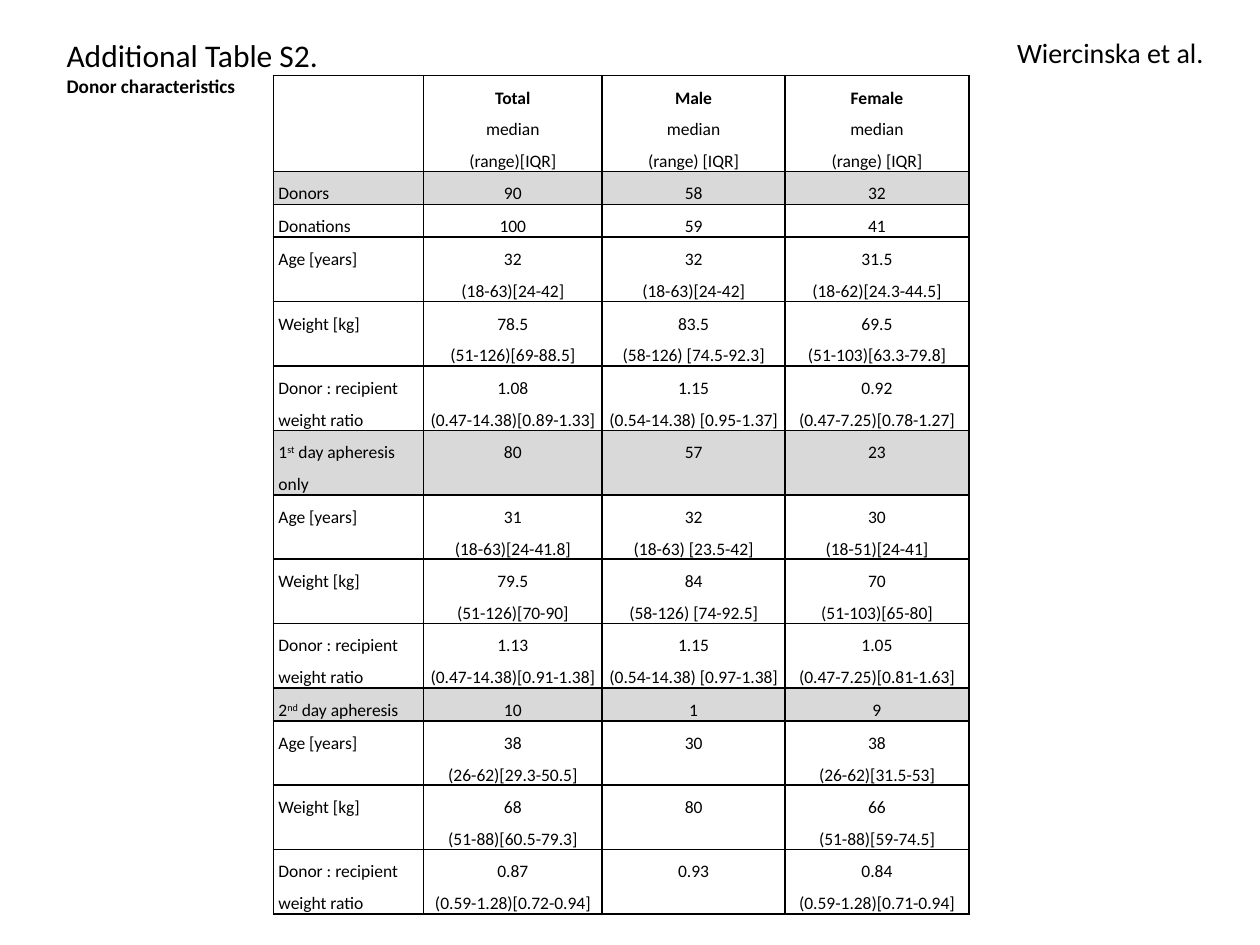
import dataclasses
import typing

import lxml.etree
import pptx
import pptx.dml.color
import pptx.enum.text
import pptx.oxml.ns
import pptx.util

Inches = pptx.util.Inches
Align = pptx.enum.text.PP_ALIGN

FONT = "Calibri"
BLACK = "000000"
GREY = "D9D9D9"
LINE = 0.22  # height of one text line in a row
WIDTHS = [1.19, 1.42, 1.45, 1.46]


@dataclasses.dataclass
class Row:
    cells: list[str]  # "\n" splits lines, "^" wraps superscripts
    lines: int = 2
    fill: typing.Optional[str] = None
    head: bool = False


@dataclasses.dataclass
class Note:
    left: float
    top: float
    width: float
    height: float
    lines: list[tuple[str, float, bool]]  # text, size, bold
    align: Align = Align.LEFT


AGE, WEIGHT, RATIO = "Age [years]", "Weight [kg]", "Donor : recipient\nweight ratio"

ROWS = [
    Row(["", "Total\nmedian\n(range)[IQR]", "Male\nmedian\n(range) [IQR]",
         "Female\nmedian\n(range) [IQR]"], lines=3, head=True),
    # All donors
    Row(["Donors", "90", "58", "32"], lines=1, fill=GREY),
    Row(["Donations", "100", "59", "41"], lines=1),
    Row([AGE, "32\n(18-63)[24-42]", "32\n(18-63)[24-42]", "31.5\n(18-62)[24.3-44.5]"]),
    Row([WEIGHT, "78.5\n(51-126)[69-88.5]", "83.5\n(58-126) [74.5-92.3]",
         "69.5\n(51-103)[63.3-79.8]"]),
    Row([RATIO, "1.08\n(0.47-14.38)[0.89-1.33]", "1.15\n(0.54-14.38) [0.95-1.37]",
         "0.92\n(0.47-7.25)[0.78-1.27]"]),
    # First day only
    Row(["1^st^ day apheresis only", "80", "57", "23"], fill=GREY),
    Row([AGE, "31\n(18-63)[24-41.8]", "32\n(18-63) [23.5-42]", "30\n(18-51)[24-41]"]),
    Row([WEIGHT, "79.5\n(51-126)[70-90]", "84\n(58-126) [74-92.5]",
         "70\n(51-103)[65-80]"]),
    Row([RATIO, "1.13\n(0.47-14.38)[0.91-1.38]", "1.15\n(0.54-14.38) [0.97-1.38]",
         "1.05\n(0.47-7.25)[0.81-1.63]"]),
    # Second day
    Row(["2^nd^ day apheresis", "10", "1", "9"], lines=1, fill=GREY),
    Row([AGE, "38\n(26-62)[29.3-50.5]", "30", "38\n(26-62)[31.5-53]"]),
    Row([WEIGHT, "68\n(51-88)[60.5-79.3]", "80", "66\n(51-88)[59-74.5]"]),
    Row([RATIO, "0.87\n(0.59-1.28)[0.72-0.94]", "0.93", "0.84\n(0.59-1.28)[0.71-0.94]"]),
]

NOTES = [
    Note(0.43, 0.24, 8.43, 0.59, [("Additional Table S2.", 18, False),
                                  ("Donor characteristics", 11, True)]),
    Note(7.6, 0.23, 2.05, 0.37, [("Wiercinska et al.", 16, False)], Align.RIGHT),
]


def tint(code: str) -> pptx.dml.color.RGBColor:
    return pptx.dml.color.RGBColor.from_string(code)


def add_run(para, text: str, size: float, bold: bool = False, sup: bool = False) -> None:
    run = para.add_run()
    run.text = text
    run.font.name = FONT
    run.font.size = pptx.util.Pt(size)
    run.font.bold = bold
    run.font.color.rgb = tint(BLACK)
    if sup:
        run.font._element.set("baseline", "30000")


def get_para(frame, index: int):
    return frame.add_paragraph() if index else frame.paragraphs[0]


def add_note(slide, note: Note) -> None:
    box = slide.shapes.add_textbox(Inches(note.left), Inches(note.top),
                                   Inches(note.width), Inches(note.height))
    frame = box.text_frame
    frame.word_wrap = True
    for index, (text, size, bold) in enumerate(note.lines):
        para = get_para(frame, index)
        para.alignment = note.align
        add_run(para, text, size, bold)


def add_edges(cell) -> None:
    props = cell._tc.get_or_add_tcPr()
    qn = pptx.oxml.ns.qn
    for side in ("a:lnL", "a:lnR", "a:lnT", "a:lnB"):
        edge = lxml.etree.SubElement(props, qn(side), w=str(pptx.util.Pt(1)))
        fill = lxml.etree.SubElement(edge, qn("a:solidFill"))
        lxml.etree.SubElement(fill, qn("a:srgbClr"), val=BLACK)


def fill_cell(cell, text: str, row: Row, align: Align) -> None:
    cell.margin_left = cell.margin_right = Inches(0.04)
    cell.margin_top, cell.margin_bottom = Inches(0.01), Inches(0)
    add_edges(cell)
    if row.fill:
        cell.fill.solid()
        cell.fill.fore_color.rgb = tint(row.fill)
    else:
        cell.fill.background()
    if not text:
        return
    for index, line in enumerate(text.split("\n")):
        para = get_para(cell.text_frame, index)
        para.alignment = align
        para.line_spacing = 1.5
        for part, piece in enumerate(line.split("^")):
            add_run(para, piece, 10, row.head and index == 0, part % 2 == 1)


def add_grid(slide, rows: list[Row]) -> None:
    height = LINE * sum(row.lines for row in rows)
    table = slide.shapes.add_table(len(rows), len(WIDTHS), Inches(2.17), Inches(0.6),
                                   Inches(sum(WIDTHS)), Inches(height)).table
    table.first_row = table.horz_banding = False
    for column, width in zip(table.columns, WIDTHS):
        column.width = Inches(width)
    for y, row in enumerate(rows):
        table.rows[y].height = Inches(LINE * row.lines)
        for x, text in enumerate(row.cells):
            fill_cell(table.cell(y, x), text, row, Align.CENTER if x else Align.LEFT)


def main() -> None:
    deck = pptx.Presentation()
    deck.slide_width, deck.slide_height = Inches(10), Inches(7.5)
    slide = deck.slides.add_slide(deck.slide_layouts[6])
    # Title and author
    for note in NOTES:
        add_note(slide, note)
    # Donor table
    add_grid(slide, ROWS)
    deck.save("out.pptx")


if __name__ == "__main__":
    main()
